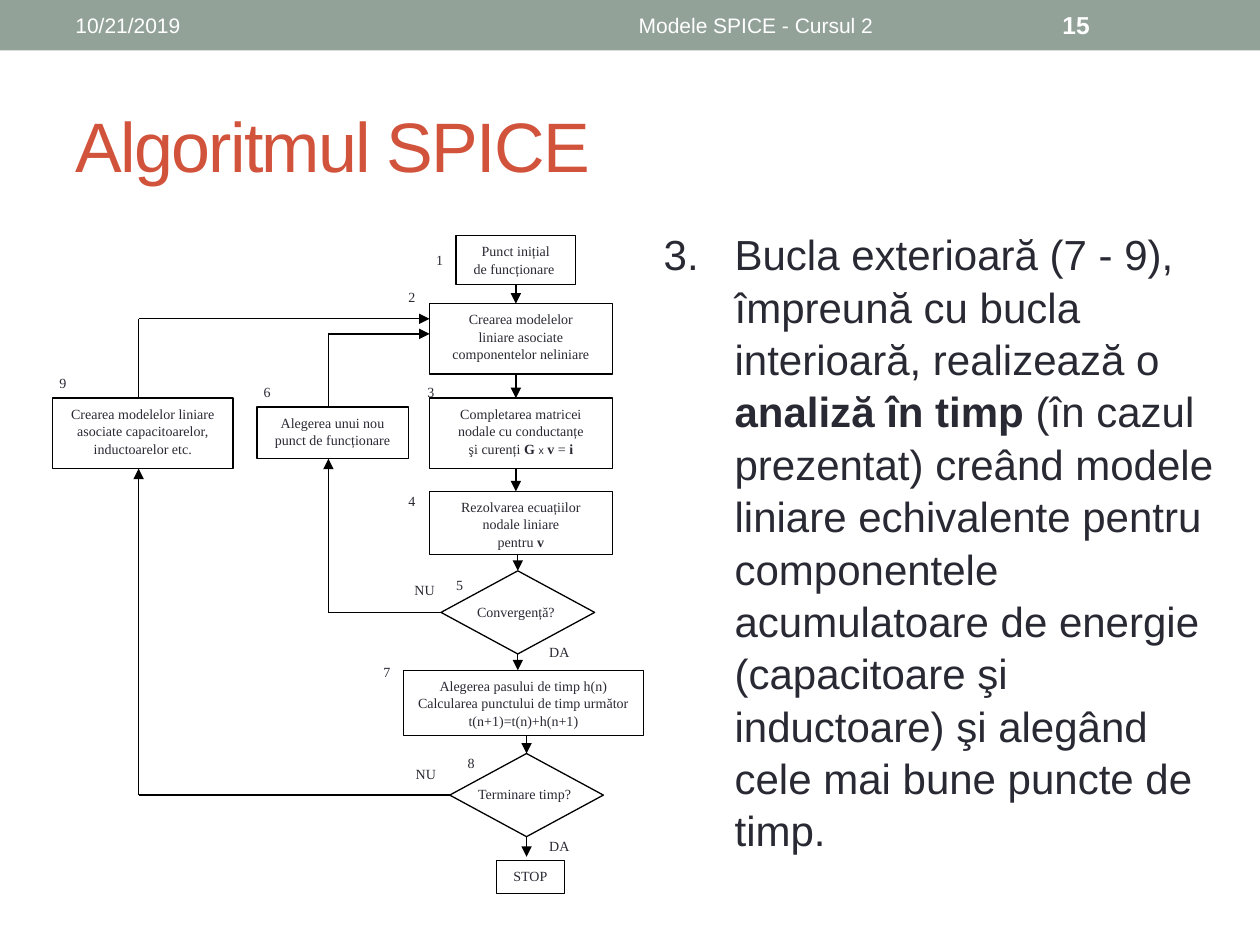
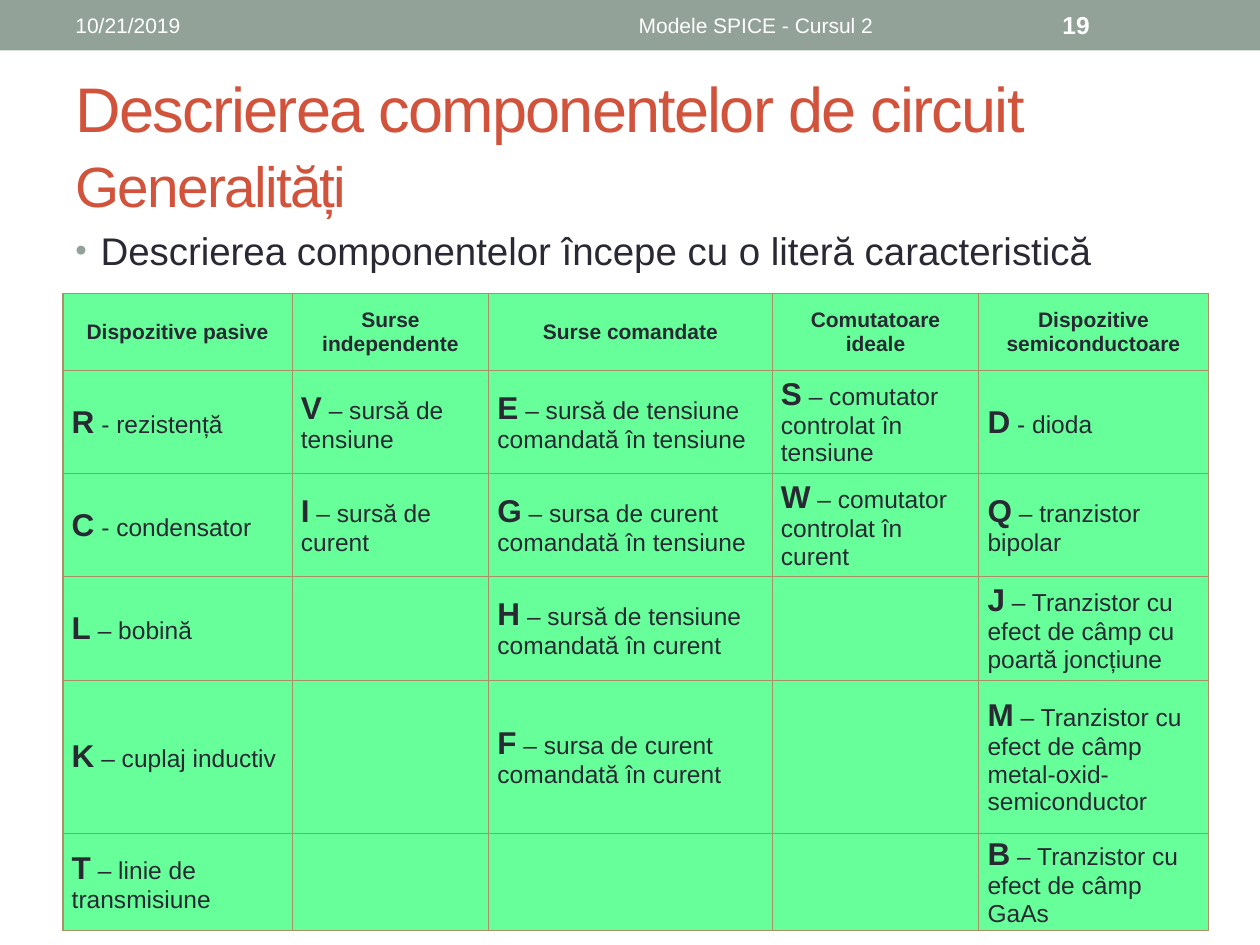
from copy import deepcopy

from lxml import etree
from pptx import Presentation
from pptx.dml.color import RGBColor
from pptx.enum import shapes, text
from pptx.oxml.ns import qn
from pptx.util import Pt

# ---- shared look
SAGE = RGBColor(0x93, 0xA2, 0x99)
RUST = RGBColor(0xD2, 0x53, 0x3C)
INK = RGBColor(0x29, 0x29, 0x34)
WHITE = RGBColor(0xFF, 0xFF, 0xFF)
BLACK = RGBColor(0, 0, 0)
MINT = RGBColor(0x66, 0xFF, 0x99)
TAN = RGBColor(0xAD, 0x8F, 0x67)
SANS, SERIF = "Arial", "Times New Roman"
LEFT, CENTER = text.PP_ALIGN.LEFT, text.PP_ALIGN.CENTER
TOP, MIDDLE = text.MSO_ANCHOR.TOP, text.MSO_ANCHOR.MIDDLE
RECT, DIAMOND = shapes.MSO_SHAPE.RECTANGLE, shapes.MSO_SHAPE.DIAMOND

DATE, COURSE = "10/21/2019", "Modele SPICE - Cursul 2"

# ---- slide 15: flowchart; text runs are (text, bold)
OUTER_LOOP = [
    ("Bucla exterioară (7 - 9), împreună cu bucla interioară, realizează o ", False),
    ("analiză în timp ", True),
    ("(în cazul prezentat) creând modele liniare echivalente pentru componentele "
     "acumulatoare de energie (capacitoare şi inductoare) şi alegând cele mai bune "
     "puncte de timp.", False),
]

# step number: left, top
NUMBERS = {
    "1": (245.5, 143.3), "2": (229.7, 164.2), "3": (240.5, 218.9),
    "4": (229.7, 280.8), "5": (257, 329), "6": (146.9, 218.9),
    "7": (215.3, 378.7), "8": (263.5, 430.6), "9": (30.2, 213.8),
}

# step: shape, (left, top, width, height), lines
STEPS = {
    "start": (RECT, (260.6, 134.6, 68.4, 28.1), ["Punct inițial", "de funcționare "]),
    "models": (RECT, (245.5, 173.5, 104.4, 40.3),
               ["Crearea modelelor", "liniare asociate", "componentelor neliniare"]),
    "matrix": (RECT, (245.5, 227.5, 104.4, 40.3),
               ["Completarea matricei", "nodale cu conductanțe",
                [("şi curenți ", False), ("G ", True), ("x", False, 6, SANS), (" ", False),
                 ("v", True), (" = ", False), ("i", True)]]),
    "solve": (RECT, (245.5, 280.8, 104.4, 36),
              ["Rezolvarea ecuațiilor", "nodale liniare", [("pentru ", False), ("v", True)]]),
    "converged": (DIAMOND, (252, 326.2, 87.8, 47.5), []),
    "time step": (RECT, (230.4, 383, 137.5, 37.4),
                  ["Alegerea pasului de timp h(n)", "Calcularea punctului de timp următor",
                   "t(n+1)=t(n)+h(n+1)"]),
    "finished": (DIAMOND, (257, 430.6, 87.8, 47.5), []),
    "stop": (RECT, (283.7, 491.8, 38.9, 18.7), ["STOP"]),
    "new point": (RECT, (146.9, 232.6, 86.4, 29.5), ["Alegerea unui nou", "punct de funcționare"]),
    "storage": (RECT, (30.2, 227.5, 103, 40.3),
                ["Crearea modelelor liniare", "asociate capacitoarelor,", "inductoarelor etc."]),
}

# caption, left, top, width
CAPTIONS = [
    ("Convergență?", 266.4, 344.2, 56.9), ("Terminare timp?", 271.4, 448.6, 56.9),
    ("DA", 310.3, 367.2, 18.7), ("DA", 310.3, 478.1, 18.7),
    ("NU", 233.3, 331.9, 18.7), ("NU", 234, 437, 18.7),
]

MAIN_X, CONV_X, END_X = 294.8, 295.9, 300.9
INNER_X, OUTER_X = 187.7, 79.2
CONV_Y, END_Y = 349.95, 454.35
INNER_IN, OUTER_IN = 190.8, 182.2

# from, to, arrowhead, (step, side) joined at each end
FLOWS = [
    ((MAIN_X, 162.7), (MAIN_X, 173.5), True, ("start", 2), None),
    ((MAIN_X, 213.8), (MAIN_X, 227.5), True, None, None),
    ((MAIN_X, 267.8), (MAIN_X, 280.8), True, None, None),
    ((CONV_X, 316.8), (CONV_X, 326.2), True, None, ("converged", 0)),
    ((CONV_X, 373.7), (CONV_X, 383), True, ("converged", 2), None),
    ((END_X, 420.4), (END_X, 430.6), True, None, ("finished", 0)),
    ((END_X, 478.1), (END_X, 489.6), True, ("finished", 2), None),
    ((252, CONV_Y), (INNER_X, CONV_Y), False, ("converged", 1), None),
    ((INNER_X, CONV_Y), (INNER_X, 262.1), True, None, None),
    ((INNER_X, 232.6), (INNER_X, INNER_IN), False, None, None),
    ((INNER_X, INNER_IN), (245.5, INNER_IN), True, None, None),
    ((257, END_Y), (OUTER_X, END_Y), False, ("finished", 1), None),
    ((OUTER_X, END_Y), (OUTER_X, 267.8), True, None, None),
    ((OUTER_X, 227.5), (OUTER_X, OUTER_IN), False, None, None),
    ((OUTER_X, OUTER_IN), (245.5, OUTER_IN), True, None, None),
]

# ---- slide 19: component table; cells are (letter, description)
LEAD = "Descrierea componentelor începe cu o literă caracteristică"
HEADS = ["Dispozitive pasive", "Surse independente", "Surse comandate",
         "Comutatoare ideale", "Dispozitive semiconductoare"]
COMPONENTS = [
    [("R", " - rezistență"), ("V", " – sursă de tensiune"),
     ("E", " – sursă de tensiune comandată în tensiune"),
     ("S", " – comutator controlat în tensiune"), ("D", " - dioda")],
    [("C", " - condensator"), ("I", " – sursă de curent"),
     ("G", " – sursa de curent comandată în tensiune"),
     ("W", " – comutator controlat în curent"), ("Q", " – tranzistor bipolar")],
    [("L", " – bobină"), None, ("H", " – sursă de tensiune comandată în curent"),
     None, ("J", " – Tranzistor cu efect de câmp cu poartă joncțiune")],
    [("K", " – cuplaj inductiv"), None, ("F", " – sursa de curent comandată în curent"),
     None, ("M", " – Tranzistor cu efect de câmp metal-oxid-semiconductor")],
    [("T", " – linie de transmisiune"), None, None, None,
     ("B", " – Tranzistor cu efect de câmp GaAs")],
]
COL_WIDTHS = [131, 112.3, 162, 118.1, 131]
ROW_HEIGHTS = [43.9, 59, 59, 59, 87.8, 51.1]


def add_run(p, words, size, color=INK, bold=False, font=SANS):
    r = p.add_run()
    r.text = words
    f = r.font
    f.size, f.bold, f.name = Pt(size), bold, font
    f.color.rgb = color
    return r


def add_child(parent, tag, **attrs):
    return etree.SubElement(parent, qn(tag), attrs)


def add_box(s, kind, box, line=False, fill=WHITE):
    sp = s.shapes.add_shape(kind, *map(Pt, box))
    sp.shadow.inherit = False
    sp.fill.solid()
    sp.fill.fore_color.rgb = fill
    if line:
        sp.line.color.rgb = BLACK
        sp.line.width = Pt(0.75)
    else:
        sp.line.fill.background()
    return sp


def add_text(s, box, anchor=TOP, align=LEFT):
    """Add a wrapping text box and return its first paragraph."""
    tf = s.shapes.add_textbox(*map(Pt, box)).text_frame
    tf.word_wrap = True
    tf.vertical_anchor = anchor
    p = tf.paragraphs[0]
    p.alignment = align
    return p


def hang(p, indent):
    """Give the paragraph a hanging indent and return its properties for a bullet."""
    pPr = p._p.get_or_add_pPr()
    pPr.set("marL", str(Pt(indent)))
    pPr.set("indent", str(-Pt(indent)))
    return pPr


def start_slide(prs, number, title):
    """Add a slide with band, header texts and title lines of (text, size)."""
    s = prs.slides.add_slide(prs.slide_layouts[5])
    add_box(s, RECT, (0, 0, 720, 28.8), fill=SAGE)
    add_run(add_text(s, (36, 1.4, 228, 26), MIDDLE), DATE, 12, WHITE)
    add_run(add_text(s, (270, 1.4, 324, 26), MIDDLE, CENTER), COURSE, 12, WHITE)
    add_run(add_text(s, (600, 1.4, 84, 26), MIDDLE), number, 14, WHITE, True)

    sp = s.shapes.title
    sp.left, sp.top, sp.width, sp.height = map(Pt, (36, 41.8, 648, 77.8))
    tf = sp.text_frame
    tf.vertical_anchor = MIDDLE
    tf.auto_size = text.MSO_AUTO_SIZE.NONE
    p = tf.paragraphs[0]
    p.alignment = LEFT
    p.line_spacing = 1.08
    r = None
    for words, size in title:
        if r is not None:
            p.add_line_break()
            p._p[-1].append(deepcopy(r._r.get_or_add_rPr()))
        r = add_run(p, words, size, RUST)
        r._r.get_or_add_rPr().set("spc", "-100")
    return s


def write_lines(sp, lines, inset=None):
    """Write centred 8 pt lines; a line is a string or a list of runs."""
    tf = sp.text_frame
    tf.word_wrap = True
    tf.vertical_anchor = TOP
    if inset is not None:
        tf.margin_left = tf.margin_top = tf.margin_right = tf.margin_bottom = Pt(inset)
    for i, line in enumerate(lines):
        p = tf.add_paragraph() if i else tf.paragraphs[0]
        p.alignment = CENTER
        p.line_spacing = 1.05
        for words, bold, *other in [(line, False)] if isinstance(line, str) else line:
            size, font = other or (8, SERIF)
            add_run(p, words, size, INK, bold, font)


def add_flow(s, steps, start, end, arrow, begin_at, end_at):
    cx = s.shapes.add_connector(shapes.MSO_CONNECTOR.STRAIGHT, *map(Pt, start + end))
    if begin_at:
        cx.begin_connect(steps[begin_at[0]], begin_at[1])
    if end_at:
        cx.end_connect(steps[end_at[0]], end_at[1])
    cx.line.color.rgb = BLACK
    cx.line.width = Pt(0.75)
    if arrow:
        add_child(cx.line._get_or_add_ln(), "a:tailEnd", type="triangle")
    add_child(cx._element.spPr, "a:effectLst")


def build_algorithm(prs):
    s = start_slide(prs, "15", [("Algoritmul SPICE", 40)])
    p = add_text(s, (372.2, 126, 329.8, 356.4))
    p.line_spacing = 1.045
    p.space_before = Pt(1)
    add_child(hang(p, 40.5), "a:buAutoNum", type="arabicPeriod", startAt="3")
    for words, bold in OUTER_LOOP:
        add_run(p, words, 24, bold=bold)

    for number, place in NUMBERS.items():
        write_lines(add_box(s, RECT, place + (11.5, 10.8)), [number], 0)
    steps = {}
    for name, (kind, box, lines) in STEPS.items():
        steps[name] = add_box(s, kind, box, line=True)
        write_lines(steps[name], lines)
    for words, left, top, width in CAPTIONS:
        write_lines(add_box(s, RECT, (left, top, width, 12.2)), [words], 0)
    for flow in FLOWS:
        add_flow(s, steps, *flow)


def format_cell(cell):
    cell.vertical_anchor = MIDDLE
    cell.margin_left = cell.margin_right = Pt(5)
    cell.margin_top = cell.margin_bottom = 0
    tcPr = cell._tc.get_or_add_tcPr()
    for side in ("a:lnL", "a:lnR", "a:lnT", "a:lnB"):
        ln = add_child(tcPr, side, w=str(Pt(0.75)))
        add_child(add_child(ln, "a:solidFill"), "a:srgbClr", val=str(TAN))
    cell.fill.solid()
    cell.fill.fore_color.rgb = MINT


def build_components(prs):
    s = start_slide(prs, "19", [("Descrierea componentelor de circuit", 36),
                                ("Generalități", 32.4)])
    p = add_text(s, (36, 126, 648, 383.8))
    p.space_before = Pt(2.4)
    pPr = hang(p, 14.4)
    add_child(add_child(pPr, "a:buClr"), "a:srgbClr", val=str(SAGE))
    add_child(pPr, "a:buSzPct", val="85000")
    add_child(pPr, "a:buFont", typeface=SANS)
    add_child(pPr, "a:buChar", char="•")
    add_run(p, LEAD, 22)

    rows = [HEADS] + COMPONENTS
    frame = s.shapes.add_table(len(rows), len(HEADS), Pt(36), Pt(167.8),
                               Pt(sum(COL_WIDTHS)), Pt(sum(ROW_HEIGHTS)))
    table = frame.table
    table.first_row = table.horz_banding = False
    for column, width in zip(table.columns, COL_WIDTHS):
        column.width = Pt(width)
    for row, height, entries in zip(table.rows, ROW_HEIGHTS, rows):
        row.height = Pt(height)
        for cell, entry in zip(row.cells, entries):
            format_cell(cell)
            p = cell.text_frame.paragraphs[0]
            if isinstance(entry, str):
                p.alignment = CENTER
                add_run(p, entry, 12, bold=True)
            elif entry:
                add_run(p, entry[0], 18, bold=True)
                add_run(p, entry[1], 14)


def main():
    prs = Presentation()
    prs.slide_width, prs.slide_height = Pt(720), Pt(540)
    build_algorithm(prs)
    build_components(prs)
    prs.save("out.pptx")


if __name__ == "__main__":
    main()
